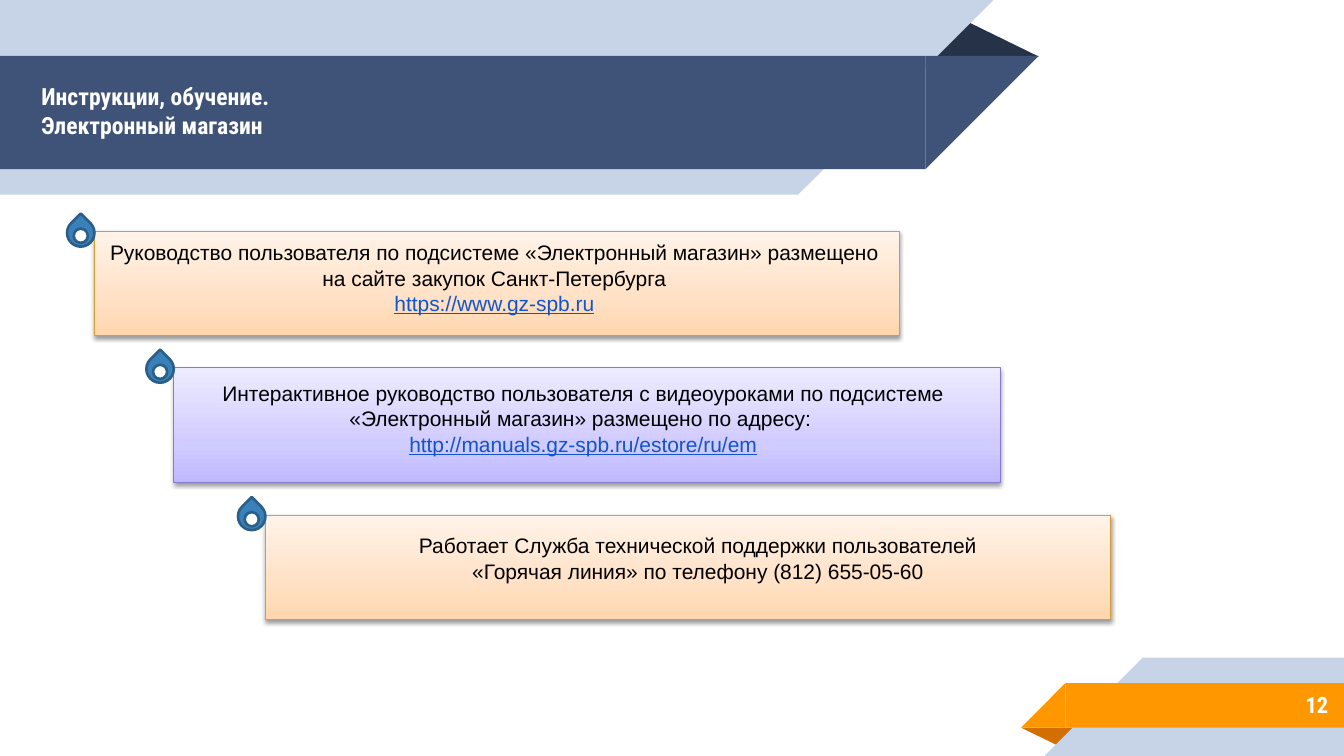
from typing import NamedTuple

from lxml.etree import SubElement
from pptx import Presentation
from pptx.dml.color import RGBColor
from pptx.enum.shapes import MSO_SHAPE as Shape
from pptx.enum.text import MSO_ANCHOR as Anchor, PP_ALIGN as Align
from pptx.oxml.ns import qn
from pptx.util import Inches, Pt

COLUMNS, ROWS = 142.3, 80
UNIT = Inches(0.1)

WHITE = RGBColor(0xFF, 0xFF, 0xFF)
BLACK = RGBColor(0x00, 0x00, 0x00)
PALE = RGBColor(0xC7, 0xD3, 0xE6)
NAVY = RGBColor(0x3F, 0x53, 0x78)
NAVY_FOLD = RGBColor(0x26, 0x32, 0x48)
ORANGE = RGBColor(0xFF, 0x98, 0x00)
ORANGE_FOLD = RGBColor(0xD2, 0x6F, 0x00)
LINK = RGBColor(0x11, 0x55, 0xCC)
DROP = RGBColor(0x3A, 0x81, 0xBA)
DROP_EDGE = RGBColor(0x2B, 0x5F, 0x8A)
PEACH_EDGE = RGBColor(0xD7, 0x9D, 0x34)
PEACH = (RGBColor(0xFF, 0xD6, 0xAD), RGBColor(0xFF, 0xE1, 0xC5), RGBColor(0xFF, 0xF3, 0xE9))
LILAC_EDGE = RGBColor(0x86, 0x7C, 0xCF)
LILAC = (RGBColor(0xBF, 0xB8, 0xFF), RGBColor(0xD1, 0xCC, 0xFF), RGBColor(0xED, 0xEB, 0xFF))


class Area(NamedTuple):
    column: float
    row: float
    columns: float
    rows: float

    def lengths(self) -> list[int]:
        return [round(value * UNIT) for value in self]


class Style(NamedTuple):
    font: str
    size: float
    color: RGBColor
    bold: bool = False
    align: Align = Align.LEFT
    anchor: Anchor = Anchor.TOP
    inset: float = 0.5


class Piece(NamedTuple):
    kind: Shape
    area: Area
    color: RGBColor
    turn: float = 0
    flipped: bool = False


class Card(NamedTuple):
    area: Area
    text_area: Area
    stops: tuple[RGBColor, ...]
    edge: RGBColor
    message: str
    link: str = ""


HEADING = Style("Roboto Condensed", 18, WHITE, True, Align.LEFT, Anchor.MIDDLE, 1)
NUMBER = HEADING._replace(size=17.1, align=Align.RIGHT)
BODY = Style("Arial", 16, BLACK, align=Align.CENTER)


def ribbon(area: Area, slant: float, color: RGBColor, header: bool) -> list[Piece]:
    turn = 180 if header else 0
    column = area.column + area.columns if header else area.column - slant
    tip = Area(column, area.row, slant, area.rows)
    return [
        Piece(Shape.RECTANGLE, area, color, turn, True),
        Piece(Shape.RIGHT_TRIANGLE, tip, color, turn, True),
    ]


PIECES = [
    Piece(Shape.ISOSCELES_TRIANGLE, Area(97.9, 2, 12.1, 4), NAVY_FOLD),
    *ribbon(Area(0, 0, 84.5, 20.6), 20.7, PALE, True),
    *ribbon(Area(0, 5.9, 98, 12), 12, NAVY, True),
    Piece(Shape.ISOSCELES_TRIANGLE, Area(108.1, 77, 6.1, 2), ORANGE_FOLD, 180),
    *ribbon(Area(121, 69.6, 21.3, 10.4), 10.4, PALE, False),
    *ribbon(Area(112.8, 72.3, 29.5, 4.7), 4.7, ORANGE, False),
]

CARDS = [
    Card(Area(10, 24.5, 85.2, 11), Area(10.6, 24.9, 83.5, 9.8), PEACH, PEACH_EDGE,
         "Руководство пользователя по подсистеме «Электронный магазин» "
         "размещено на сайте закупок Санкт-Петербурга",
         "https://www.gz-spb.ru"),
    Card(Area(18.4, 38.9, 87.5, 12.2), Area(18.9, 39.8, 85.7, 9.2), LILAC, LILAC_EDGE,
         "Интерактивное руководство пользователя с видеоуроками по подсистеме "
         "«Электронный магазин» размещено по адресу: ",
         "http://manuals.gz-spb.ru/estore/ru/em"),
    Card(Area(28.1, 54.5, 89.5, 11.1), Area(30.1, 55.9, 87.6, 7.5), PEACH, PEACH_EDGE,
         "Работает Служба технической поддержки пользователей\n"
         "«Горячая линия» по телефону (812) 655-05-60"),
]


def draw_piece(shapes, piece: Piece):
    box = shapes.add_shape(piece.kind, *piece.area.lengths())
    box.shadow.inherit = False
    box.fill.solid()
    box.fill.fore_color.rgb = piece.color
    box.line.fill.background()
    box.rotation = piece.turn
    if piece.kind == Shape.ISOSCELES_TRIANGLE:
        box.adjustments[0] = 0.324
    if piece.flipped:
        box._element.spPr.get_or_add_xfrm().set("flipH", "1")
    return box


def outline(box, color: RGBColor, width: float) -> None:
    box.line.color.rgb = color
    box.line.width = Pt(width)


def add_text(page, area: Area, style: Style, message: str, link: str = "") -> None:
    frame = page.shapes.add_textbox(*area.lengths()).text_frame
    frame.word_wrap = True
    frame.vertical_anchor = style.anchor
    frame.margin_left = frame.margin_right = UNIT
    frame.margin_top = frame.margin_bottom = round(style.inset * UNIT)
    para = frame.paragraphs[0]
    for index, line in enumerate(message.split("\n")):
        if index:
            para.add_line_break()
        add_span(para, line, style)
    if link:
        span = add_span(frame.add_paragraph(), link, style._replace(color=LINK))
        span.font.underline = True


def add_span(para, words: str, style: Style):
    para.alignment = style.align
    span = para.add_run()
    span.text = words
    span.font.name = style.font
    span.font.size = Pt(style.size)
    span.font.bold = style.bold
    span.font.color.rgb = style.color
    return span


def add_color(parent, color: RGBColor):
    return SubElement(parent, qn("a:srgbClr"), val=str(color))


def shade(box, colors: tuple[RGBColor, ...]) -> None:
    box.fill.gradient()
    gradient = box._element.spPr.find(qn("a:gradFill"))
    gradient.clear()
    stops = SubElement(gradient, qn("a:gsLst"))
    for position, color in zip((0, 35000, 100000), colors):
        add_color(SubElement(stops, qn("a:gs"), pos=str(position)), color)
    SubElement(gradient, qn("a:lin"), ang="16200000", scaled="0")


def cast_shadow(box) -> None:
    effects = box._element.spPr.find(qn("a:effectLst"))
    shadow = SubElement(effects, qn("a:outerShdw"), blurRad="40000", dist="20000",
                        dir="5400000", rotWithShape="0")
    SubElement(add_color(shadow, BLACK), qn("a:alpha"), val="38000")


def draw_marker(page, card: Area) -> None:
    column, row = card.column - 2.9, card.row - 1.3
    group = page.shapes.add_group_shape()
    for piece in (
        Piece(Shape.TEAR, Area(column, row, 2.9, 2.9), DROP, 315.1),
        Piece(Shape.OVAL, Area(column + 0.7, row + 1, 1.5, 1.5), WHITE),
    ):
        outline(draw_piece(group.shapes, piece), DROP_EDGE, 2)


def draw_card(page, card: Card) -> None:
    box = draw_piece(page.shapes, Piece(Shape.RECTANGLE, card.area, card.stops[0]))
    shade(box, card.stops)
    outline(box, card.edge, 0.75)
    cast_shadow(box)
    add_text(page, card.text_area, BODY, card.message, card.link)
    draw_marker(page, card.area)


def main() -> None:
    deck = Presentation()
    deck.slide_width, deck.slide_height = round(COLUMNS * UNIT), ROWS * UNIT
    page = deck.slides.add_slide(deck.slide_layouts[6])
    for piece in PIECES:
        draw_piece(page.shapes, piece)
    add_text(page, Area(3.4, 7.5, 69.4, 8.4), HEADING,
             "Инструкции, обучение.\nЭлектронный магазин")
    for card in CARDS:
        draw_card(page, card)
    add_text(page, Area(118.5, 72.1, 23.1, 4.9), NUMBER, "12")
    deck.save("out.pptx")


if __name__ == "__main__":
    main()
